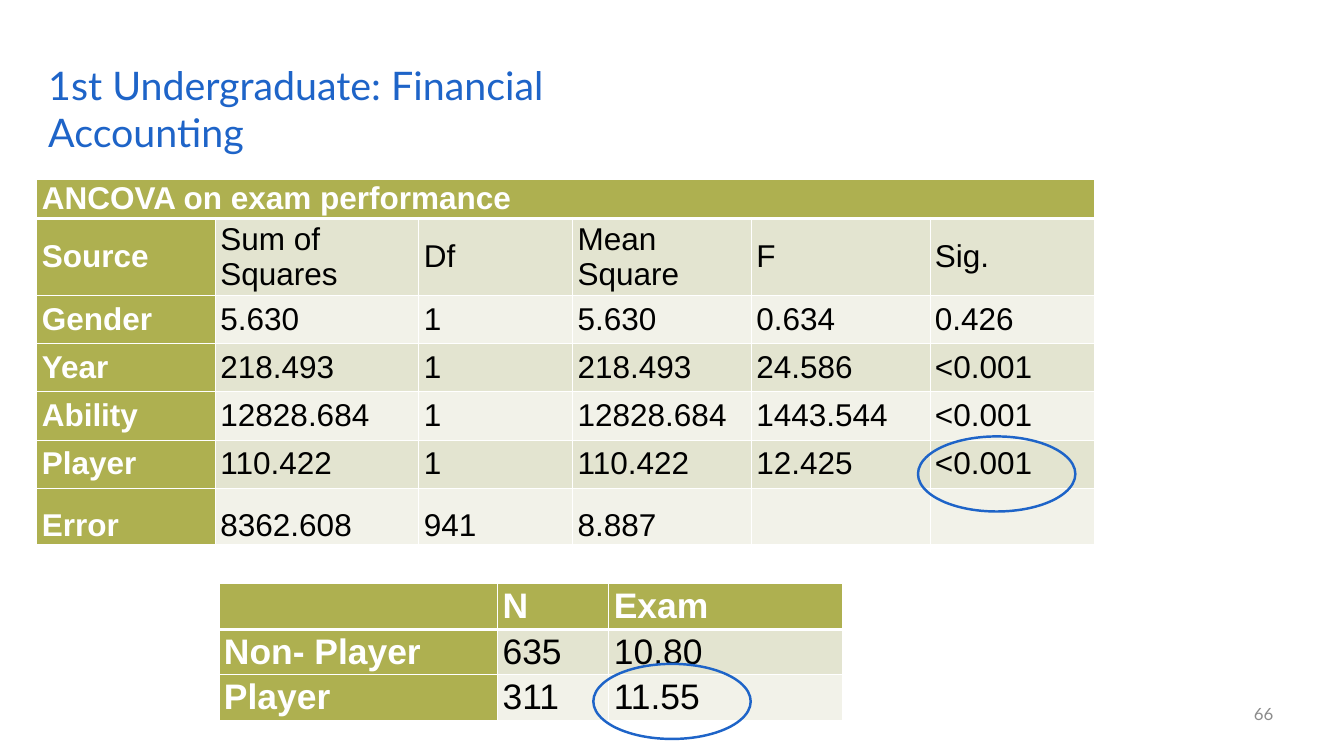
"""Build the ANCOVA results slide for Financial Accounting."""
from lxml.etree import SubElement
from pptx import Presentation
from pptx.dml.color import RGBColor
from pptx.enum.shapes import MSO_SHAPE
from pptx.enum.text import MSO_ANCHOR, MSO_AUTO_SIZE, PP_ALIGN
from pptx.oxml.ns import qn
from pptx.util import Inches, Pt

TITLE = "1st Undergraduate: Financial Accounting"
PAGE = "66"
ANCOVA = [
    ["ANCOVA on exam performance", "", "", "", "", ""],
    ["Source", "Sum of Squares", "Df", "Mean Square", "F", "Sig."],
    ["Gender", "5.630", "1", "5.630", "0.634", "0.426"],
    ["Year", "218.493", "1", "218.493", "24.586", "<0.001"],
    ["Ability", "12828.684", "1", "12828.684", "1443.544", "<0.001"],
    ["Player", "110.422", "1", "110.422", "12.425", "<0.001"],
    ["Error", "8362.608", "941", "8.887", "", ""],
]
ANCOVA_COLS = [2.52, 2.87, 2.17, 2.52, 2.52, 2.32]
ANCOVA_ROWS = [0.55, 1.09, 0.68, 0.68, 0.68, 0.68, 0.73]
ANCOVA_SPACING = [None] * 6 + [1.5]
GROUPS = [
    ["", "N", "Exam"],
    ["Non- Player", "635", "10.80"],
    ["Player", "311", "11.55"],
]
GROUP_COLS = [3.93, 1.57, 3.29]
GROUP_ROWS = [0.61] * 3
GROUP_SPACING = [1.07] * 3
HIGHLIGHTS = [(12.95, 6.16), (8.37, 9.37)]
BLUE, OLIVE, WHITE, BLACK, GREY = "1E64C8", "AEB050", "FFFFFF", "000000", "8C8C8C"
BANDS = ["F2F2E9", "E3E4D0"]


def rgb(value):
    return RGBColor.from_string(value)


def set_font(p, name, size, color, bold=False):
    p.font.name, p.font.size, p.font.bold = name, Pt(size), bold
    p.font.color.rgb = rgb(color)


def add_borders(cell, row):
    tc_pr = cell._tc.get_or_add_tcPr()
    widths = {"L": 1, "R": 1, "T": 3 if row == 1 else 1, "B": 3 if row == 0 else 1}
    for side, width in widths.items():
        ln = SubElement(tc_pr, qn(f"a:ln{side}"), w=str(Pt(width)))
        fill = SubElement(ln, qn("a:solidFill"))
        SubElement(fill, qn("a:srgbClr"), val=WHITE)


def add_grid(s, left, top, data, cols, rows, size, spacing, anchor):
    frame = s.shapes.add_table(len(rows), len(cols), Inches(left), Inches(top),
                               Inches(sum(cols)), Inches(sum(rows)))
    table = frame.table
    for column, width in zip(table.columns, cols):
        column.width = Inches(width)
    for i, (row, height) in enumerate(zip(table.rows, rows)):
        row.height = Inches(height)
        for j, cell in enumerate(row.cells):
            heading = i == 0 or j == 0
            add_borders(cell, i)
            cell.fill.solid()
            cell.fill.fore_color.rgb = rgb(OLIVE if heading else BANDS[i % 2])
            cell.margin_left = cell.margin_right = Inches(0.07)
            cell.margin_top = cell.margin_bottom = 0
            cell.vertical_anchor = anchor
            if data[i][j]:
                cell.text = data[i][j]
                p = cell.text_frame.paragraphs[0]
                p.line_spacing = spacing[i]
                set_font(p, "Arial", size, WHITE if heading else BLACK, heading)
    return table


def main():
    prs = Presentation()
    prs.slide_width, prs.slide_height = Inches(18.96), Inches(10.67)
    s = prs.slides.add_slide(prs.slide_layouts[5])

    title = s.shapes.title
    title.left, title.top = Inches(0.29), Inches(0.81)
    title.width, title.height = Inches(8.5), Inches(0.77)
    tf = title.text_frame
    tf.text = TITLE
    tf.word_wrap = True
    tf.auto_size = MSO_AUTO_SIZE.SHAPE_TO_FIT_TEXT
    tf.vertical_anchor = MSO_ANCHOR.TOP
    tf.margin_left = Inches(0.39)
    p = tf.paragraphs[0]
    p.alignment = PP_ALIGN.LEFT
    set_font(p, "Lato", 40, BLUE)

    number = s.shapes.add_textbox(Inches(17.05), Inches(9.79), Inches(1.01), Inches(0.57))
    tf = number.text_frame
    tf.text = PAGE
    tf.word_wrap = True
    tf.vertical_anchor = MSO_ANCHOR.MIDDLE
    p = tf.paragraphs[0]
    p.alignment = PP_ALIGN.RIGHT
    set_font(p, "Lato", 17.1, GREY)

    add_grid(s, 3.09, 8.24, GROUPS, GROUP_COLS, GROUP_ROWS, 36, GROUP_SPACING,
             MSO_ANCHOR.TOP)
    ancova = add_grid(s, 0.52, 2.53, ANCOVA, ANCOVA_COLS, ANCOVA_ROWS, 32,
                      ANCOVA_SPACING, MSO_ANCHOR.MIDDLE)
    ancova.cell(0, 0).merge(ancova.cell(0, len(ANCOVA_COLS) - 1))

    for left, top in HIGHLIGHTS:
        sp = s.shapes.add_shape(MSO_SHAPE.OVAL, Inches(left), Inches(top),
                                Inches(2.22), Inches(1.06))
        sp.shadow.inherit = False
        sp.fill.background()
        sp.line.color.rgb = rgb(BLUE)
        sp.line.width = Pt(2.5)

    prs.save("out.pptx")


if __name__ == "__main__":
    main()
